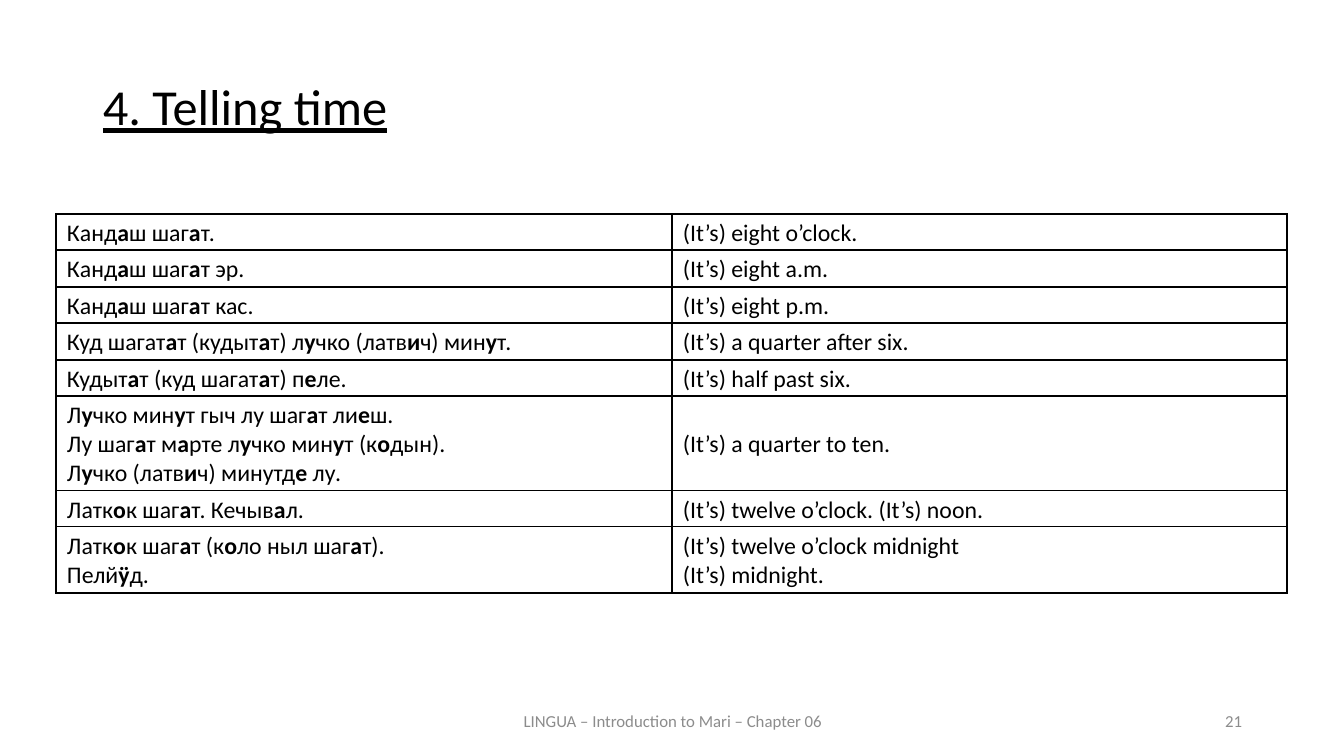
from itertools import pairwise

from lxml.etree import SubElement
from pptx import Presentation
from pptx.dml.color import RGBColor
from pptx.enum.text import MSO_ANCHOR, PP_ALIGN
from pptx.oxml.ns import qn
from pptx.util import Emu, Pt

# Text between asterisks is bold and marks the stressed vowel.
PHRASES = [
    (["Канд*а*ш шаг*а*т."], ["(It’s) eight o’clock."]),
    (["Канд*а*ш шаг*а*т эр."], ["(It’s) eight a.m."]),
    (["Канд*а*ш шаг*а*т кас."], ["(It’s) eight p.m."]),
    (["Куд шагат*а*т (кудыт*а*т) л*у*чко (латв*и*ч) мин*у*т."],
     ["(It’s) a quarter after six."]),
    (["Кудыт*а*т (куд шагат*а*т) п*е*ле."], ["(It’s) half past six."]),
    (["Л*у*чко мин*у*т гыч лу шаг*а*т ли*е*ш.",
      "Лу шаг*а*т м*а*рте л*у*чко мин*у*т (к*о*дын).",
      "Л*у*чко (латв*и*ч) минутд*е* лу."],
     ["(It’s) a quarter to ten."]),
    (["Латк*о*к шаг*а*т. Кечыв*а*л."], ["(It’s) twelve o’clock. (It’s) noon."]),
    (["Латк*о*к шаг*а*т (к*о*ло ныл шаг*а*т).", "Пелй*ӱ*д."],
     ["(It’s) twelve o’clock midnight", "(It’s) midnight."]),
]
HEADING = "4. Telling time"
FOOTER = "LINGUA – Introduction to Mari – Chapter 06"
PAGE_NUMBER = "21"

COLORS = {"ink": "000000", "footer": "8C8C8C", "paper": "FFFFFF"}
FONT = "Calibri"
COLUMN_EDGES = [56, 672, 1287]
ROW_EDGES = [214, 250, 287, 323, 360, 396, 491, 527, 593]
OUTER_LINE, INNER_LINE = Pt(1.5), Pt(1)


def px(length):
    return Emu(round(length * 914400 / 100.8))


def add_run(paragraph, text, size, color, bold=False, underline=False):
    run = paragraph.add_run()
    run.text = text
    run.font.name = FONT
    run.font.size = Pt(size)
    run.font.bold = bold
    run.font.underline = underline
    run.font.color.rgb = RGBColor.from_string(COLORS[color])


def add_label(slide, box, text, size, color, align, anchor, underline=False):
    frame = slide.shapes.add_textbox(*map(px, box)).text_frame
    frame.word_wrap = True
    frame.vertical_anchor = anchor
    paragraph = frame.paragraphs[0]
    paragraph.alignment = align
    add_run(paragraph, text, size, color, underline=underline)
    return paragraph


def set_borders(cell, widths):
    """Draw the left, right, top and bottom lines, ahead of the cell fill."""
    properties = cell._tc.get_or_add_tcPr()
    for position, (side, width) in enumerate(zip("LRTB", widths)):
        line = SubElement(properties, qn(f"a:ln{side}"), w=str(width))
        fill = SubElement(line, qn("a:solidFill"))
        SubElement(fill, qn("a:srgbClr"), val=COLORS["ink"])
        properties.insert(position, line)


def fill_cell(cell, lines):
    cell.margin_left = cell.margin_right = px(11)
    cell.margin_top, cell.margin_bottom = px(2), 0
    cell.vertical_anchor = MSO_ANCHOR.MIDDLE
    cell.fill.solid()
    cell.fill.fore_color.rgb = RGBColor.from_string(COLORS["paper"])
    frame = cell.text_frame
    for number, line in enumerate(lines):
        paragraph = frame.add_paragraph() if number else frame.paragraphs[0]
        for part, text in enumerate(line.split("*")):
            if text:
                add_run(paragraph, text, 17, "ink", bold=part % 2 == 1)


def add_phrase_table(slide):
    left, right = COLUMN_EDGES[0], COLUMN_EDGES[-1]
    top, bottom = ROW_EDGES[0], ROW_EDGES[-1]
    table = slide.shapes.add_table(
        len(PHRASES), 2, px(left), px(top), px(right - left), px(bottom - top)).table
    table.first_row = table.horz_banding = False
    for column, (start, end) in zip(table.columns, pairwise(COLUMN_EDGES)):
        column.width = px(end - start)
    for row, (start, end) in zip(table.rows, pairwise(ROW_EDGES)):
        row.height = px(end - start)
    last = len(PHRASES) - 1
    for r, phrase in enumerate(PHRASES):
        for c, lines in enumerate(phrase):
            cell = table.cell(r, c)
            fill_cell(cell, lines)
            on_edge = (c == 0, c == 1, r == 0, r == last)
            set_borders(cell, [OUTER_LINE if edge else INNER_LINE for edge in on_edge])


def main():
    presentation = Presentation()
    presentation.slide_width, presentation.slide_height = px(1344), px(756)
    slide = presentation.slides.add_slide(presentation.slide_layouts[6])
    heading = add_label(slide, (93, 77, 1159, 603), HEADING, 36, "ink",
                        PP_ALIGN.JUSTIFY, MSO_ANCHOR.TOP, underline=True)
    heading.line_spacing = 0.9
    heading.space_before = Pt(12)
    add_label(slide, (446, 701, 454, 40), FOOTER, 12, "footer",
              PP_ALIGN.CENTER, MSO_ANCHOR.MIDDLE)
    add_label(slide, (950, 701, 302, 40), PAGE_NUMBER, 12, "footer",
              PP_ALIGN.RIGHT, MSO_ANCHOR.MIDDLE)
    add_phrase_table(slide)
    presentation.save("out.pptx")


if __name__ == "__main__":
    main()
